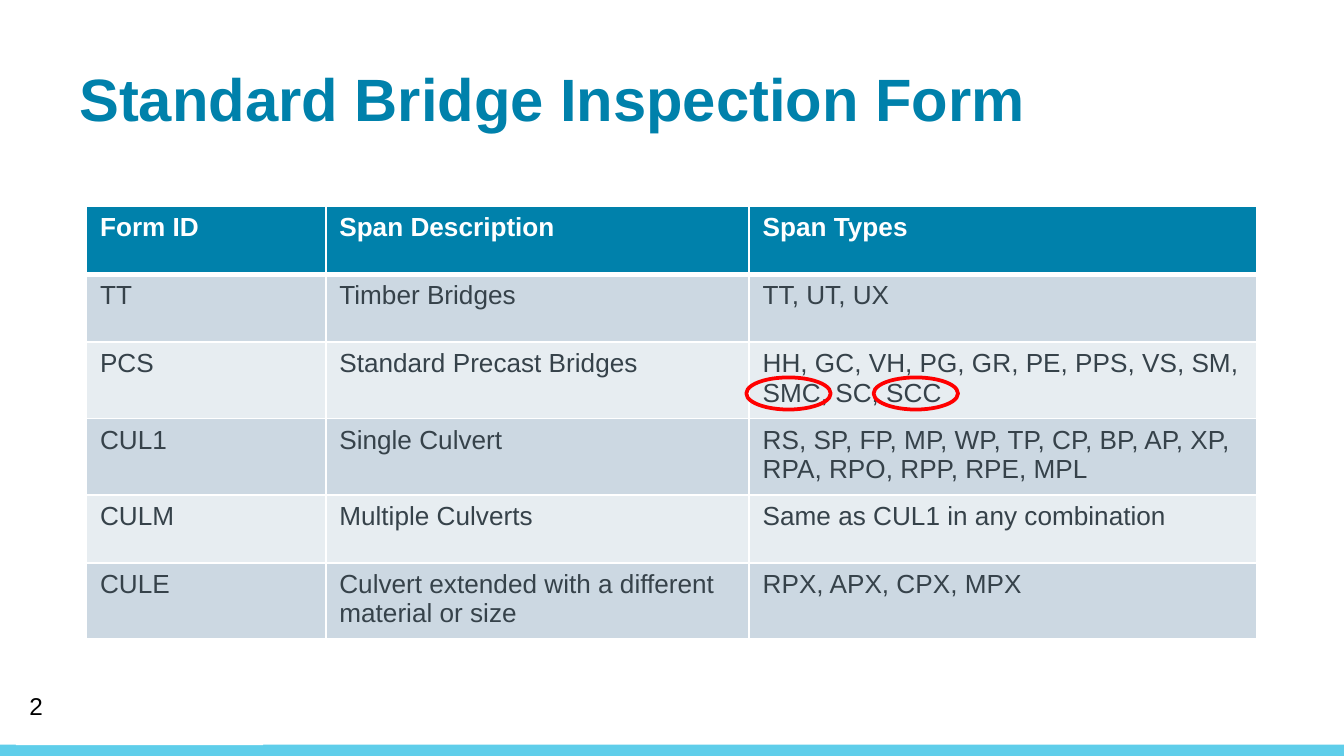
from typing import NamedTuple

from lxml import etree
from pptx import Presentation
from pptx.dml.color import RGBColor
from pptx.enum.shapes import MSO_SHAPE
from pptx.enum.text import MSO_ANCHOR, MSO_AUTO_SIZE, PP_ALIGN
from pptx.oxml.ns import qn
from pptx.util import Pt

RECTANGLE = MSO_SHAPE.RECTANGLE
OVAL = MSO_SHAPE.OVAL
TOP = MSO_ANCHOR.TOP
MIDDLE = MSO_ANCHOR.MIDDLE
LEFT = PP_ALIGN.LEFT
NO_AUTOFIT = MSO_AUTO_SIZE.NONE

FONT = "Arial"
BLUE = "0081AB"
WHITE = "FFFFFF"
DARK = "36424A"
BANDS = ("CCD8E2", "E7EDF1")

COLUMN_WIDTHS = (128.2, 226.8, 272)
ROW_HEIGHT = 36.5
TABLE_LEFT, TABLE_TOP = 46.4, 110.4
ROWS = (
    ("Form ID", "Span Description", "Span Types"),
    ("TT", "Timber Bridges", "TT, UT, UX"),
    ("PCS", "Standard Precast Bridges",
     "HH, GC, VH, PG, GR, PE, PPS, VS, SM, SMC, SC, SCC"),
    ("CUL1", "Single Culvert",
     "RS, SP, FP, MP, WP, TP, CP, BP, AP, XP, RPA, RPO, RPP, RPE, MPL"),
    ("CULM", "Multiple Culverts", "Same as CUL1 in any combination"),
    ("CULE", "Culvert extended with a different material or size",
     "RPX, APX, CPX, MPX"),
)


class Box(NamedTuple):
    left: float
    top: float
    width: float
    height: float


class Figure(NamedTuple):
    kind: MSO_SHAPE
    box: Box
    fill: str | None = None
    line: str | None = None


BANDS_AT_FOOT = (
    Figure(RECTANGLE, Box(0, 399, 720, 6), fill="5FCEEA"),
    Figure(RECTANGLE, Box(8.6, 390, 132.5, 9.3), fill=WHITE),
)
HIGHLIGHTS = tuple(
    Figure(OVAL, Box(left, 202.2, 45.2, 17.2), line="FF0000")
    for left in (468, 399.8)
)


def color(value: str) -> RGBColor:
    return RGBColor.from_string(value)


def lengths(box: Box) -> list[Pt]:
    return [Pt(value) for value in box]


def set_attributes(target, values: dict) -> None:
    for name, value in values.items():
        setattr(target, name, value)


def write_text(frame, text: str, size: float, hue: str, bold: bool = False) -> None:
    frame.text = text
    paragraph = frame.paragraphs[0]
    paragraph.alignment = LEFT
    font = paragraph.runs[0].font
    set_attributes(font, {"name": FONT, "size": Pt(size), "bold": bold})
    font.color.rgb = color(hue)


def draw_figure(slide, figure: Figure) -> None:
    shape = slide.shapes.add_shape(figure.kind, *lengths(figure.box))
    shape.shadow.inherit = False
    if figure.fill:
        shape.fill.solid()
        shape.fill.fore_color.rgb = color(figure.fill)
    else:
        shape.fill.background()
    if figure.line:
        shape.line.color.rgb = color(figure.line)
        shape.line.width = Pt(2)
    else:
        shape.line.fill.background()


def draw_title(slide, text: str, box: Box) -> None:
    title = slide.shapes.title
    names = ("left", "top", "width", "height")
    set_attributes(title, dict(zip(names, lengths(box))))
    write_text(title.text_frame, text, 32, BLUE, True)
    set_attributes(title.text_frame, {
        "margin_left": 0, "margin_top": Pt(6.3), "word_wrap": True,
        "vertical_anchor": TOP, "auto_size": NO_AUTOFIT,
    })


def draw_page_number(slide, text: str, box: Box) -> None:
    frame = slide.shapes.add_textbox(*lengths(box)).text_frame
    set_attributes(frame, {"word_wrap": True, "vertical_anchor": MIDDLE})
    write_text(frame, text, 13, "000000")


def set_borders(cell, widths: dict[str, float]) -> None:
    properties = cell._tc.get_or_add_tcPr()
    for index, (side, width) in enumerate(widths.items()):
        line = etree.Element(qn(f"a:ln{side}"), w=str(Pt(width)))
        fill = etree.SubElement(line, qn("a:solidFill"))
        etree.SubElement(fill, qn("a:srgbClr"), val=WHITE)
        properties.insert(index, line)


def draw_table(slide) -> None:
    box = Box(TABLE_LEFT, TABLE_TOP, sum(COLUMN_WIDTHS), ROW_HEIGHT * len(ROWS))
    table = slide.shapes.add_table(
        len(ROWS), len(COLUMN_WIDTHS), *lengths(box)).table
    for column, width in zip(table.columns, COLUMN_WIDTHS):
        column.width = Pt(width)
    for row_index, texts in enumerate(ROWS):
        table.rows[row_index].height = Pt(ROW_HEIGHT)
        header = row_index == 0
        for column_index, text in enumerate(texts):
            cell = table.cell(row_index, column_index)
            write_text(cell.text_frame, text, 14, WHITE if header else DARK, header)
            cell.fill.solid()
            cell.fill.fore_color.rgb = color(
                BLUE if header else BANDS[(row_index - 1) % 2])
            set_borders(cell, {
                "L": 1, "R": 1,
                "T": 3 if row_index == 1 else 1,
                "B": 3 if header else 1,
            })


def main() -> None:
    presentation = Presentation()
    set_attributes(presentation, {"slide_width": Pt(720), "slide_height": Pt(405)})
    slide = presentation.slides.add_slide(presentation.slide_layouts[5])
    for figure in BANDS_AT_FOOT:
        draw_figure(slide, figure)
    draw_title(slide, "Standard Bridge Inspection Form", Box(42.5, 26.6, 647.3, 41))
    draw_page_number(slide, "2", Box(8.6, 367.2, 162, 21.6))
    draw_table(slide)
    for figure in HIGHLIGHTS:
        draw_figure(slide, figure)
    presentation.save("out.pptx")


if __name__ == "__main__":
    main()
